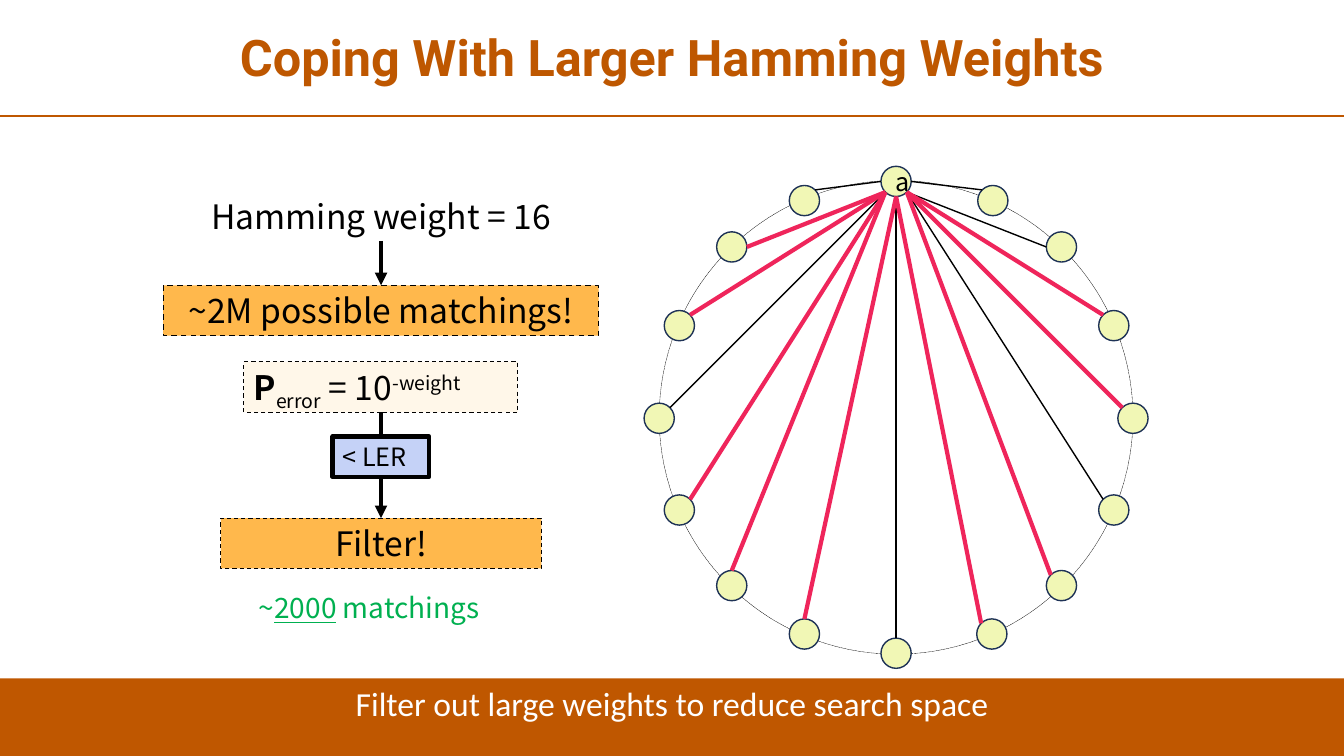
import math

from lxml import etree
from pptx import Presentation
from pptx.dml.color import RGBColor
from pptx.enum.dml import MSO_LINE
from pptx.enum.shapes import MSO_CONNECTOR, MSO_SHAPE
from pptx.enum.text import MSO_ANCHOR, MSO_AUTO_SIZE, PP_ALIGN
from pptx.oxml.ns import qn
from pptx.util import Pt

RECT, OVAL = MSO_SHAPE.RECTANGLE, MSO_SHAPE.OVAL
STRAIGHT = MSO_CONNECTOR.STRAIGHT
DASH, DOTS = MSO_LINE.DASH, MSO_LINE.ROUND_DOT
TOP, MIDDLE = MSO_ANCHOR.TOP, MSO_ANCHOR.MIDDLE
LEFT, CENTER = PP_ALIGN.LEFT, PP_ALIGN.CENTER
GROW = MSO_AUTO_SIZE.SHAPE_TO_FIT_TEXT

ORANGE, AMBER, CREAM, BLUE = "BF5700", "FFB84C", "FFF7E9", "C5D2F7"
BLACK, WHITE, GREEN, RED = "000000", "FFFFFF", "00B050", "EF255B"
NODE_FILL, NODE_LINE = "F1F7B5", "1E3256"
BODY_FONT = "Noto Sans CJK JP"

# Rim points of a node, as compass angles in degrees (y grows downwards)
E, SE, S, SW, W, NW, N, NE = range(0, 360, 45)
NODE_SIZE = 21.6
ROOT = (629.3, 118.8)
# left, top, rim point on the root, rim point on the node, filtered out
NODES = [
    (698.4, 132.5, E, NW, False),
    (747.4, 165.6, SE, W, False),
    (784.8, 221.8, SE, NW, True),
    (798.5, 288, SE, NW, True),
    (784.8, 353.5, SE, NW, False),
    (747.4, 407.5, SE, NW, True),
    (697.7, 442.1, S, NW, True),
    (629.3, 455.8, S, N, False),
    (563.8, 442.1, S, N, True),
    (511.9, 407.5, SW, N, True),
    (474.5, 353.5, SW, NE, True),
    (460.1, 288, SW, NE, False),
    (474.5, 221.8, SW, NE, True),
    (511.9, 165.6, SW, E, True),
    (563.8, 132.5, W, NE, False),
]


def rgb(value):
    return RGBColor.from_string(value)


def add_shape(s, kind, box, fill=None, line=None, width=1, dash=None):
    sp = s.shapes.add_shape(kind, *map(Pt, box))
    sp.shadow.inherit = False
    if fill:
        sp.fill.solid()
        sp.fill.fore_color.rgb = rgb(fill)
    else:
        sp.fill.background()
    if line:
        sp.line.color.rgb = rgb(line)
        sp.line.width = Pt(width)
        if dash:
            sp.line.dash_style = dash
    else:
        sp.line.fill.background()
    return sp


def set_text(sp, runs, size, color=BLACK, font=BODY_FONT, align=CENTER,
             anchor=TOP, wrap=True, grow=False):
    """Fill a shape with one paragraph; runs are (text, attributes) pairs."""
    tf = sp.text_frame
    tf.word_wrap = wrap
    tf.vertical_anchor = anchor
    if grow:
        tf.auto_size = GROW
    p = tf.paragraphs[0]
    p.alignment = align
    for text, attributes in runs:
        r = p.add_run()
        r.text = text
        r.font.name = font
        r.font.size = Pt(size)
        r.font.color.rgb = rgb(color)
        for name, value in attributes.items():
            r.font._element.set(name, value)
    return p


def add_textbox(s, box, runs, size, **options):
    sp = s.shapes.add_textbox(*map(Pt, box))
    return set_text(sp, runs, size, **options)


def add_line(s, start, end, color=BLACK, width=1, arrow=False):
    c = s.shapes.add_connector(STRAIGHT, *map(Pt, (*start, *end)))
    c.line.color.rgb = rgb(color)
    c.line.width = Pt(width)
    if arrow:
        tail = etree.SubElement(c.line._get_or_add_ln(), qn("a:tailEnd"))
        tail.set("type", "triangle")
    etree.SubElement(c._element.spPr, qn("a:effectLst"))


def rim_point(left, top, angle):
    r, a = NODE_SIZE / 2, math.radians(angle)
    return left + r + r * math.cos(a), top + r + r * math.sin(a)


def add_node(s, left, top):
    box = (left, top, NODE_SIZE, NODE_SIZE)
    return add_shape(s, OVAL, box, NODE_FILL, NODE_LINE)


def add_graph(s):
    add_shape(s, OVAL, (470.9, 128.9, 338.4, 338.4), None, BLACK, 0.25, DOTS)
    set_text(add_node(s, *ROOT), [("a", {})], 18, anchor=MIDDLE)
    for left, top, *_ in NODES:
        add_node(s, left, top)
    # Kept links lie below the filtered ones
    for left, top, out, into, filtered in sorted(NODES, key=lambda n: n[4]):
        color, width = (RED, 3) if filtered else (BLACK, 1)
        add_line(s, rim_point(*ROOT, out), rim_point(left, top, into),
                 color, width)


def add_flow(s):
    axis = 272.2
    add_textbox(s, (131, 136.1, 282.4, 36), [("Hamming weight = 16", {})], 24,
                wrap=False, grow=True)
    add_line(s, (axis, 172.1), (axis, 203.8), width=3, arrow=True)
    sp = add_shape(s, RECT, (116.6, 203.8, 311, 36), AMBER, BLACK, 1, DASH)
    set_text(sp, [("~2M possible matchings!", {})], 24, wrap=False, grow=True)

    # Error probability
    sp = add_shape(s, RECT, (174.2, 258.5, 195.8, 36), CREAM, BLACK, 0.75, DASH)
    runs = [("P", {"b": "1"}), ("error", {"baseline": "-25000"}),
            (" = 10", {}), ("-weight", {"baseline": "30000"})]
    set_text(sp, runs, 24, align=LEFT, wrap=False, grow=True)
    add_line(s, (axis, 294.5), (axis, 370.1), width=3, arrow=True)

    # Filter and its condition
    sp = add_shape(s, RECT, (157.7, 370.1, 229, 36), AMBER, BLACK, 0.75, DASH)
    set_text(sp, [("Filter!", {})], 24, grow=True)
    sp = add_shape(s, RECT, (237.6, 311.8, 69.1, 28.8), BLUE, BLACK, 3)
    set_text(sp, [("< LER", {})], 18, align=LEFT, wrap=False, grow=True)

    runs = [("~", {}), ("2000", {"u": "sng"}), (" matchings", {})]
    add_textbox(s, (177.8, 418.3, 189.4, 31.7), runs, 20, color=GREEN,
                align=LEFT, wrap=False, grow=True)


def main():
    prs = Presentation()
    prs.slide_width, prs.slide_height = Pt(960), Pt(540)
    s = prs.slides.add_slide(prs.slide_layouts[6])

    # Title and rule
    p = add_textbox(s, (6.5, 2.9, 946.8, 79.9),
                    [("Coping With Larger Hamming Weights", {"b": "1"})], 36,
                    color="BE5700", font="Roboto", anchor=MIDDLE)
    p.line_spacing = 0.9
    add_line(s, (0, 82.8), (960, 82.8), ORANGE, 1.5)

    # Footer message
    sp = add_shape(s, RECT, (0, 484.6, 960, 57.6), ORANGE)
    set_text(sp, [("Filter out large weights to reduce search space", {})], 24,
             color=WHITE, font="Calibri")

    add_graph(s)
    add_flow(s)
    prs.save("out.pptx")


if __name__ == "__main__":
    main()
